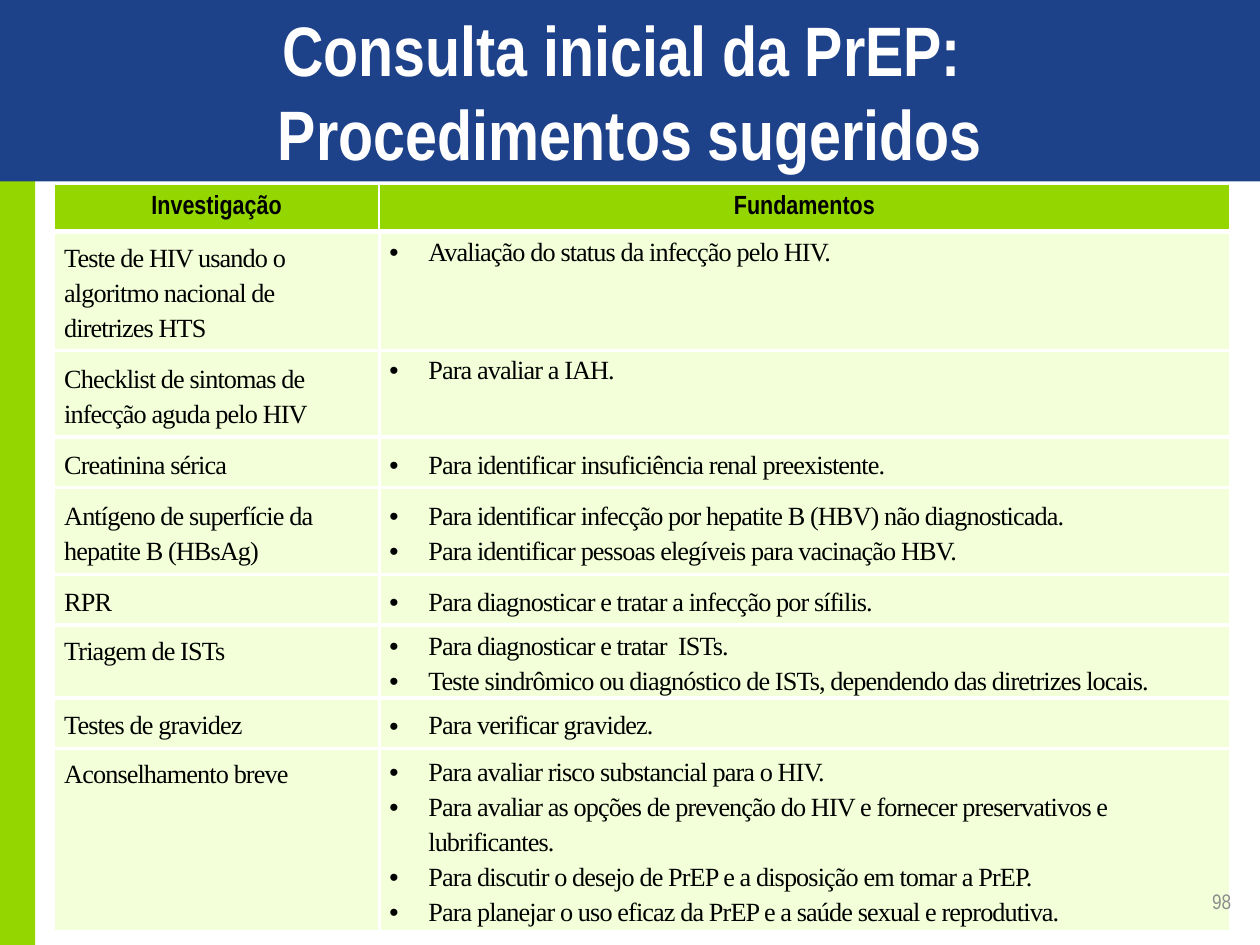
from lxml.etree import SubElement
from pptx import Presentation
from pptx.dml.color import RGBColor
from pptx.enum.shapes import MSO_SHAPE
from pptx.enum.text import MSO_ANCHOR as ANCHOR, PP_ALIGN as ALIGN
from pptx.oxml import parse_xml
from pptx.oxml.ns import nsdecls, qn
from pptx.util import Inches, Pt

COLORS = {"blue": "1E428A", "green": "94D600", "pale": "F3FFD9",
          "white": "FFFFFF", "black": "000000", "gray": "8C8C8C"}
SANS, SERIF = "Arial Narrow", "Times New Roman"
WIDTH, HEIGHT = Inches(10), Inches(7.5)
COLUMNS = (2.58, 6.75)
ROWS = (0.38, 0.94, 0.69, 0.4, 0.69, 0.4, 0.58, 0.4, 1.45)
HEADERS = ("Investigação", "Fundamentos")
TOP, MIDDLE = ANCHOR.TOP, ANCHOR.MIDDLE
PROCEDURES = [
    ("Teste de HIV usando o algoritmo nacional de \ndiretrizes HTS", MIDDLE, TOP,
     ["Avaliação do status da infecção pelo HIV."]),
    ("Checklist de sintomas de infecção aguda pelo HIV", MIDDLE, TOP,
     ["Para avaliar a IAH."]),
    ("Creatinina sérica", MIDDLE, MIDDLE,
     ["Para identificar insuficiência renal preexistente."]),
    ("Antígeno de superfície da hepatite B (HBsAg)", MIDDLE, MIDDLE,
     ["Para identificar infecção por hepatite B (HBV) não diagnosticada.",
      "Para identificar pessoas elegíveis para vacinação HBV."]),
    ("RPR", MIDDLE, MIDDLE,
     ["Para diagnosticar e tratar a infecção por sífilis."]),
    ("Triagem de ISTs", TOP, MIDDLE,
     ["Para diagnosticar e tratar  ISTs.",
      "Teste sindrômico ou diagnóstico de ISTs, dependendo das diretrizes locais."]),
    ("Testes de gravidez", MIDDLE, MIDDLE, ["Para verificar gravidez."]),
    ("Aconselhamento breve", TOP, MIDDLE,
     ["Para avaliar risco substancial para o HIV.",
      "Para avaliar as opções de prevenção do HIV e fornecer preservativos e lubrificantes.",
      "Para discutir o desejo de PrEP e a disposição em tomar a PrEP.",
      "Para planejar o uso eficaz da PrEP e a saúde sexual e reprodutiva."]),
]


def rgb(name):
    return RGBColor.from_string(COLORS[name])


def box(x, y, w, h):
    return int(x * WIDTH), int(y * HEIGHT), int(w * WIDTH), int(h * HEIGHT)


def add_band(s, area, color):
    sp = s.shapes.add_shape(MSO_SHAPE.RECTANGLE, *box(*area))
    sp.shadow.inherit = False
    sp.fill.solid()
    sp.fill.fore_color.rgb = rgb(color)
    sp.line.fill.background()


def write(p, text, size, font, color, bold=False, align=ALIGN.LEFT,
          spacing=None, tracking=None):
    p.alignment = align
    if spacing:
        p.line_spacing = Pt(spacing)
    for i, line in enumerate(text.split("\n")):
        if i:
            p.add_line_break()
        r = p.add_run()
        r.text = line
        r.font.size, r.font.name, r.font.bold = Pt(size), font, bold
        r.font.color.rgb = rgb(color)
        if tracking:
            r._r.get_or_add_rPr().set("spc", str(tracking))


def add_text(s, area, text, **style):
    tf = s.shapes.add_textbox(*box(*area)).text_frame
    tf.word_wrap = True
    tf.vertical_anchor = MIDDLE
    write(tf.paragraphs[0], text, **style)


def add_bullet(p):
    pPr = p._p.get_or_add_pPr()
    pPr.set("marL", str(Inches(0.31)))
    pPr.set("indent", str(-Inches(0.31)))
    SubElement(pPr, qn("a:buFont")).set("typeface", "Arial")
    SubElement(pPr, qn("a:buChar")).set("char", "•")


def style_cell(cell, fill, widths, anchor):
    cell.fill.solid()
    cell.fill.fore_color.rgb = rgb(fill)
    cell.vertical_anchor = anchor
    tcPr = cell._tc.get_or_add_tcPr()
    for i, (side, width) in enumerate(zip("LTRB", widths)):
        order = "LRTB".index(side)
        tcPr.insert(min(i, order), parse_xml(
            f'<a:ln{side} {nsdecls("a")} w="{Pt(width)}"><a:solidFill>'
            f'<a:srgbClr val="{COLORS["white"]}"/></a:solidFill></a:ln{side}>'))


def fill_body_cell(cell, lines, anchor, widths, inset, bulleted):
    style_cell(cell, "pale", widths, anchor)
    cell.margin_left = cell.margin_right = Inches(0.08)
    cell.margin_top = cell.margin_bottom = Inches(inset)
    tf = cell.text_frame
    for i, line in enumerate(lines):
        p = tf.add_paragraph() if i else tf.paragraphs[0]
        if bulleted:
            add_bullet(p)
        write(p, line, 15, SERIF, "black", spacing=20, tracking=-50)


def add_procedures(s):
    count = len(ROWS)
    table = s.shapes.add_table(count, len(COLUMNS), Inches(0.43), Inches(1.46),
                               Inches(sum(COLUMNS)), Inches(sum(ROWS))).table
    for column, width in zip(table.columns, COLUMNS):
        column.width = Inches(width)
    for row, height in zip(table.rows, ROWS):
        row.height = Inches(height)
    for i, header in enumerate(HEADERS):
        cell = table.cell(0, i)
        style_cell(cell, "green", (1, 1, 1, 3), MIDDLE)
        write(cell.text_frame.paragraphs[0], header, 15, SANS, "black", True, ALIGN.CENTER)
    for i, (name, name_anchor, reason_anchor, reasons) in enumerate(PROCEDURES, 1):
        top = 1 if i == 1 else 2.25
        bottom = 1 if i == count - 1 else 2.25
        fill_body_cell(table.cell(i, 0), [name], name_anchor,
                       (1, top, 2.25, bottom), 0.05, False)
        fill_body_cell(table.cell(i, 1), reasons, reason_anchor,
                       (2.25, top, 1, bottom), 0, True)


def main():
    prs = Presentation()
    prs.slide_width, prs.slide_height = WIDTH, HEIGHT
    s = prs.slides.add_slide(prs.slide_layouts[6])
    add_band(s, (0, 0.175, 0.028, 0.825), "green")
    add_band(s, (0, 0, 1, 0.192), "blue")
    add_text(s, (0, 0.033, 1, 0.125), "Consulta inicial da PrEP: \nProcedimentos sugeridos",
             size=40, font=SANS, color="white", bold=True, align=ALIGN.CENTER, spacing=48)
    add_procedures(s)
    add_text(s, (0.754, 0.927, 0.233, 0.053), "98",
             size=12, font=SANS, color="gray", align=ALIGN.RIGHT)
    prs.save("out.pptx")


if __name__ == "__main__":
    main()
